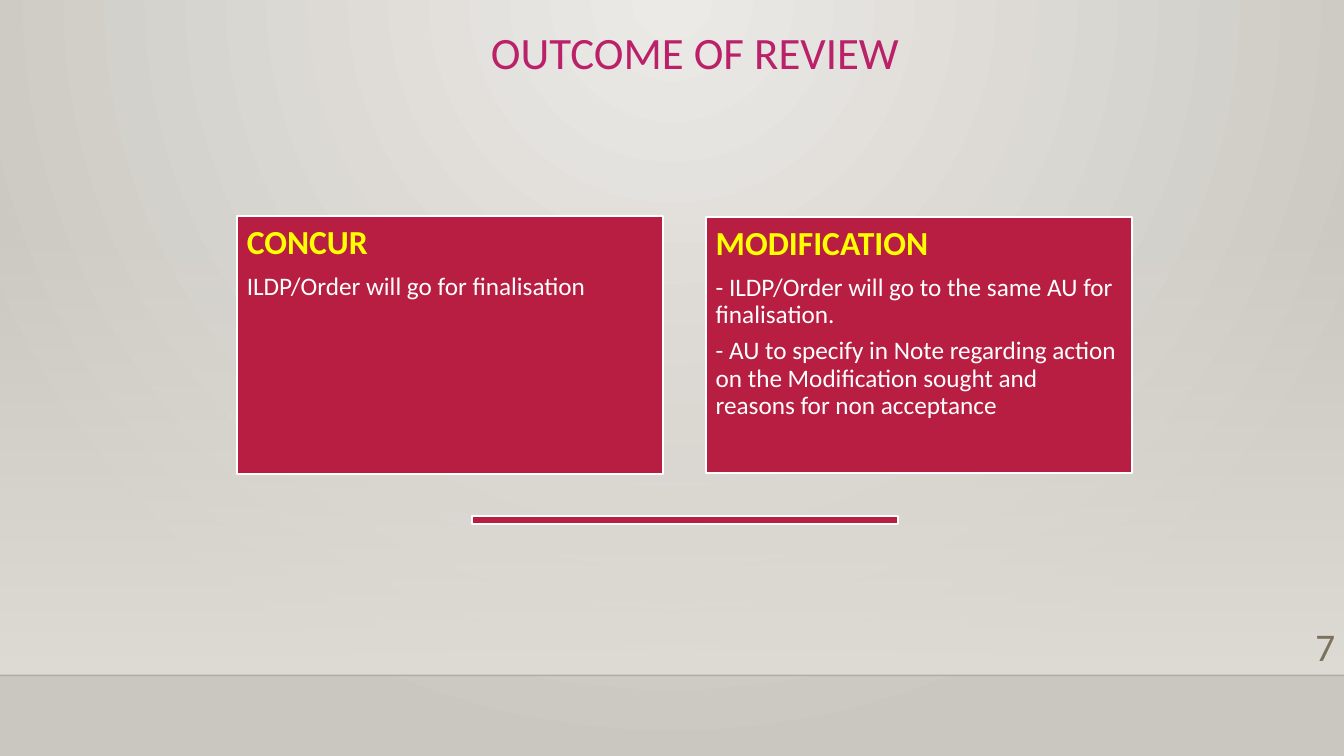
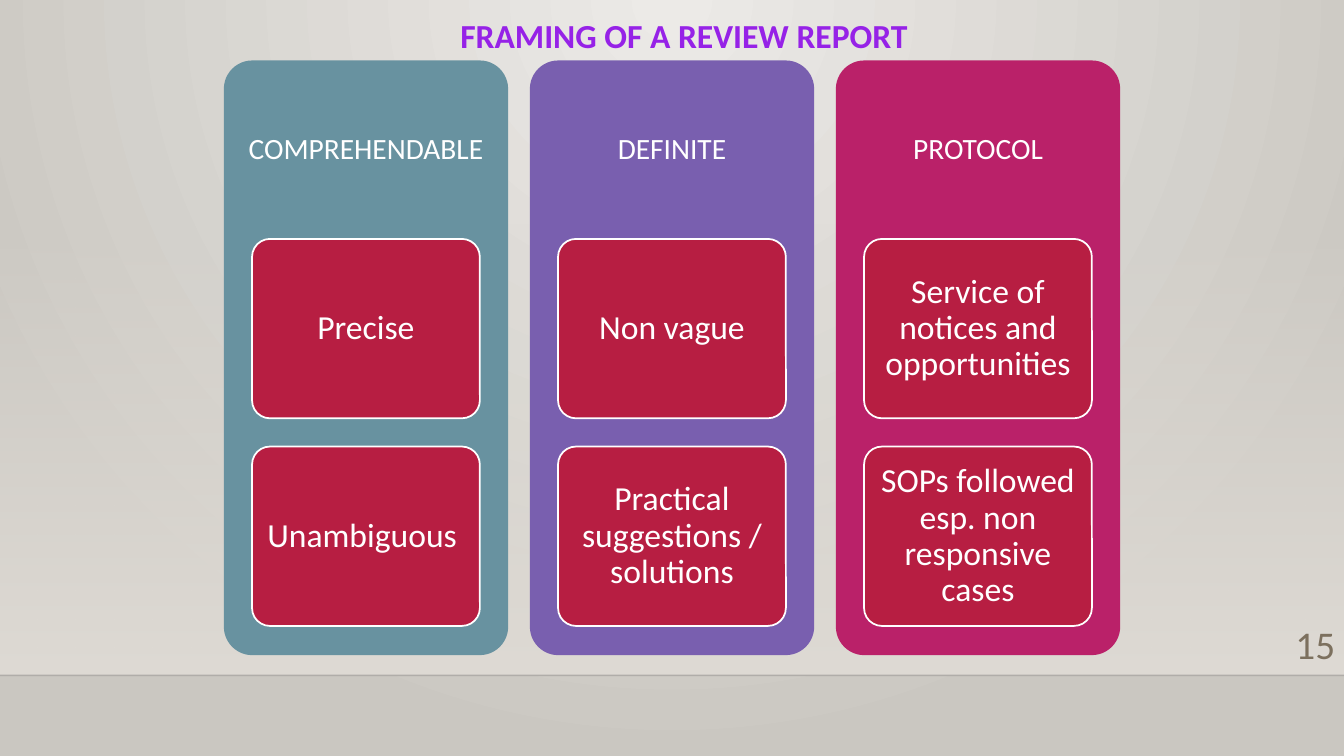
from dataclasses import dataclass

from lxml import etree
from pptx import Presentation
from pptx.dml.color import RGBColor
from pptx.enum.shapes import MSO_CONNECTOR, MSO_SHAPE
from pptx.enum.text import MSO_ANCHOR, PP_ALIGN
from pptx.oxml.ns import qn
from pptx.util import Inches, Pt

RECTANGLE = MSO_SHAPE.RECTANGLE
ROUNDED = MSO_SHAPE.ROUNDED_RECTANGLE
STRAIGHT = MSO_CONNECTOR.STRAIGHT
TOP, MIDDLE = MSO_ANCHOR.TOP, MSO_ANCHOR.MIDDLE
LEFT, CENTER, RIGHT = PP_ALIGN.LEFT, PP_ALIGN.CENTER, PP_ALIGN.RIGHT


@dataclass(frozen=True)
class Theme:
    font: str = "Calibri"
    background_light: str = "ECEAE7"
    background_dark: str = "CAC7C1"
    band: str = "DFDBD5"
    rule: str = "000001"
    crimson: str = "B71E42"
    magenta: str = "BA2169"
    purple: str = "795FAF"
    teal: str = "6892A0"
    violet: str = "9622E7"
    yellow: str = "FFFF00"
    white: str = "FFFFFF"
    number: str = "7C705E"
    title_size: int = 32
    number_size: int = 28
    heading_size: int = 24
    column_size: int = 21
    body_size: int = 18
    border: float = 1.25


theme = Theme()


def add_box(slide, left, top, width, height, kind=None, fill=None, border=None,
            anchor=TOP, insets=(0.1, 0.05, 0.1, 0.05)):
    place = [Inches(value) for value in (left, top, width, height)]
    if kind is None:
        shape = slide.shapes.add_textbox(*place)
    else:
        shape = slide.shapes.add_shape(kind, *place)
        shape.shadow.inherit = False
        if kind == ROUNDED:
            shape.adjustments[0] = 0.1
        if fill:
            shape.fill.solid()
            shape.fill.fore_color.rgb = RGBColor.from_string(fill)
        if border:
            shape.line.color.rgb = RGBColor.from_string(border)
            shape.line.width = Pt(theme.border)
        else:
            shape.line.fill.background()
    frame = shape.text_frame
    frame.word_wrap = True
    frame.vertical_anchor = anchor
    (frame.margin_left, frame.margin_top,
     frame.margin_right, frame.margin_bottom) = [Inches(value) for value in insets]
    return shape


def write(shape, text, size, color=theme.white, bold=False, align=CENTER,
          line_spacing=0.9, space_after=0):
    frame = shape.text_frame
    paragraph = frame.add_paragraph() if frame.text else frame.paragraphs[0]
    paragraph.alignment = align
    paragraph.line_spacing = line_spacing
    paragraph.space_after = Pt(space_after)
    run = paragraph.add_run()
    run.text = text
    run.font.name = theme.font
    run.font.size = Pt(size)
    run.font.bold = bold
    run.font.color.rgb = RGBColor.from_string(color)


presentation = Presentation()
presentation.slide_width = Inches(13.33)
presentation.slide_height = Inches(7.5)
blank_layout = presentation.slide_layouts[6]

master = presentation.slide_master
background = master.background.fill
background.gradient()
for stop, color in zip(background.gradient_stops, (theme.background_light, theme.background_dark)):
    stop.color.rgb = RGBColor.from_string(color)
gradient = master.element.find(".//" + qn("p:bgPr")).find(qn("a:gradFill"))
gradient.remove(gradient.find(qn("a:lin")))
circle = etree.SubElement(gradient, qn("a:path"), {"path": "circle"})
etree.SubElement(circle, qn("a:fillToRect"), l="43000", t="0", r="43000", b="100000")

slides = []
for number, number_top in (("7", 6.12), ("15", 6.1)):
    slide = presentation.slides.add_slide(blank_layout)
    slides.append(slide)

    band = add_box(slide, 0, 2.21, 13.33, 4.49, RECTANGLE)
    band.fill.gradient()
    band.fill.gradient_angle = 270
    for stop in band.fill.gradient_stops:
        stop.color.rgb = RGBColor.from_string(theme.band)
    first_color = band.element.spPr.find(".//" + qn("a:srgbClr"))
    etree.SubElement(first_color, qn("a:alpha"), val="0")

    rule = slide.shapes.add_connector(STRAIGHT, 0, Inches(6.7), Inches(13.33), Inches(6.7))
    rule.line.color.rgb = RGBColor.from_string(theme.rule)
    rule.line.width = Pt(1)
    rule_color = rule.element.spPr.find(".//" + qn("a:srgbClr"))
    etree.SubElement(rule_color, qn("a:alpha"), val="20000")
    etree.SubElement(rule.element.spPr, qn("a:effectLst"))

    number_box = add_box(slide, 12.45, number_top, 0.89, 0.55)
    write(number_box, number, theme.number_size, theme.number, align=RIGHT, line_spacing=1)

outcome_slide, framing_slide = slides

title = add_box(outcome_slide, 0.45, 0.26, 12.89, 0.96)
write(title, "OUTCOME OF REVIEW", theme.title_size, theme.magenta)

outcomes = [
    ("CONCUR", 2.56, ["ILDP/Order will go for finalisation"]),
    ("MODIFICATION", 2.54, [
        "- ILDP/Order will go to the same AU for finalisation.",
        "- AU to specify in Note regarding action on the Modification sought "
        "and reasons for non acceptance",
    ]),
]
for index, (heading, height, lines) in enumerate(outcomes):
    panel = add_box(outcome_slide, 2.35 + 4.65 * index, 3.42 - height / 2, 4.23, height,
                    RECTANGLE, theme.crimson, theme.white, insets=(0.1, 0.1, 0.1, 0.1))
    write(panel, heading, theme.heading_size, theme.yellow, bold=True, align=LEFT,
          space_after=0.35 * theme.heading_size)
    for line in lines:
        write(panel, line, theme.body_size, align=LEFT, space_after=0.35 * theme.body_size)
add_box(outcome_slide, 4.68, 5.12, 4.23, 0.08, RECTANGLE, theme.crimson, theme.white)

title = add_box(framing_slide, 0.96, 0.1, 11.65, 0.5)
write(title, "FRAMING OF A REVIEW REPORT", theme.heading_size, theme.violet, bold=True,
      line_spacing=1)

columns = [
    ("COMPREHENDABLE", theme.teal, ["Precise", "Unambiguous "]),
    ("DEFINITE", theme.purple, ["Non vague", "Practical suggestions / solutions"]),
    ("PROTOCOL", theme.magenta, ["Service of notices and opportunities",
                                 "SOPs followed esp. non responsive cases"]),
]
for index, (heading, color, cards) in enumerate(columns):
    left = 2.22 + 3.035 * index
    column = add_box(framing_slide, left, 0.6, 2.82, 5.9, ROUNDED, color, anchor=MIDDLE,
                     insets=(0.09, 0.09, 0.09, 4.22))
    write(column, heading, theme.column_size)
    for row, text in enumerate(cards):
        card = add_box(framing_slide, left + 0.28, 2.37 + 2.06 * row, 2.26, 1.78, ROUNDED,
                       theme.crimson, theme.white, MIDDLE, (0.07, 0.05, 0.07, 0.05))
        write(card, text, theme.heading_size)

presentation.save("out.pptx")
